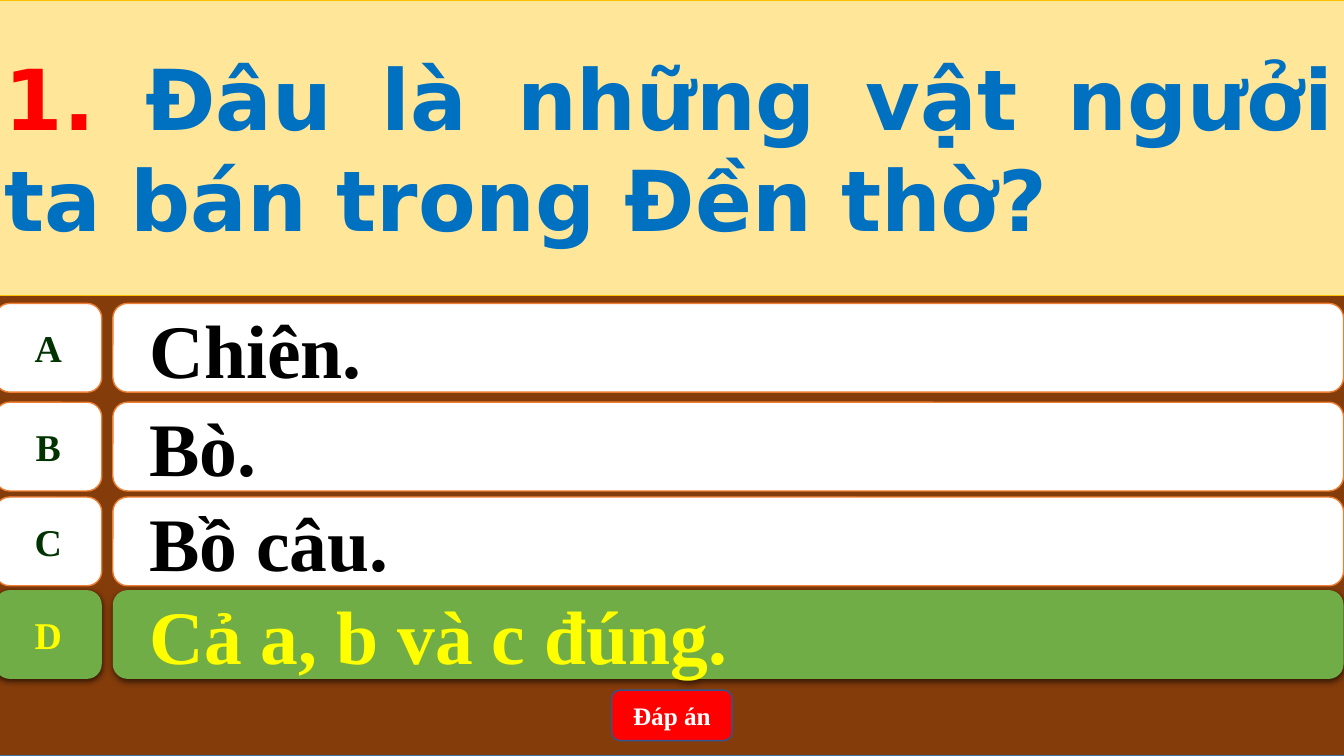
import pptx
import pptx.util
import pptx.dml.color
import pptx.enum.shapes
import pptx.enum.text
import pptx.oxml
import pptx.oxml.ns

Pt = pptx.util.Pt
RGBColor = pptx.dml.color.RGBColor
Shape = pptx.enum.shapes.MSO_SHAPE
Align = pptx.enum.text.PP_ALIGN
Anchor = pptx.enum.text.MSO_ANCHOR

WHITE = RGBColor(0xFF, 0xFF, 0xFF)
BLACK = RGBColor(0, 0, 0)
BROWN = RGBColor(0x84, 0x3C, 0x0B)
STEEL = RGBColor(0x43, 0x73, 0x9E)
NAVY = RGBColor(0x32, 0x54, 0x91)
ORANGE = RGBColor(0xED, 0x7D, 0x31)
CREAM = RGBColor(0xFF, 0xE6, 0x99)
GOLD = RGBColor(0xFF, 0xC0, 0)
RED = RGBColor(0xFF, 0, 0)
BLUE = RGBColor(0, 0x70, 0xC0)
PINE = RGBColor(0, 0x33, 0)
GREEN = RGBColor(0x70, 0xAD, 0x47)
YELLOW = RGBColor(0xFF, 0xFF, 0)

SHADOW = (
    '<a:outerShdw %s blurRad="57150" dist="19050" dir="5400000" algn="ctr" '
    'rotWithShape="0"><a:srgbClr val="000000"><a:alpha val="63000"/>'
    "</a:srgbClr></a:outerShdw>" % pptx.oxml.ns.nsdecls("a")
)


class Quiz:
    serif = "Times New Roman"
    sans = "DejaVu Sans"
    left = -3.6
    width = 964

    def __init__(self, slide):
        self.slide = slide

    def box(self, home, kind, area, fill, line=None, weight=1):
        shape = home.add_shape(kind, *[Pt(n) for n in area])
        shape.shadow.inherit = False
        shape.fill.solid()
        shape.fill.fore_color.rgb = fill
        if line is None:
            shape.line.fill.background()
        else:
            shape.line.color.rgb = line
            shape.line.width = Pt(weight)
        return shape

    def label(self, shape, runs, size, face, align=Align.CENTER, wrap=True):
        frame = shape.text_frame
        frame.word_wrap = wrap
        frame.vertical_anchor = Anchor.MIDDLE
        para = frame.paragraphs[0]
        para.alignment = align
        para.font.size = Pt(size)
        para.font.name = face
        para.font.bold = True
        for text, color in runs:
            run = para.add_run()
            run.text = text
            run.font.color.rgb = color
        return para

    def back(self):
        area = (self.left, 0, self.width, 540)
        self.box(self.slide.shapes, Shape.RECTANGLE, area, BROWN, STEEL)

    def ask(self, runs):
        area = (self.left, 0, self.width, 211)
        shape = self.box(self.slide.shapes, Shape.RECTANGLE, area, CREAM, GOLD, 0.5)
        self.label(shape, runs, 60, self.sans, Align.JUSTIFY)

    def choice(self, top, mark, text, right):
        fill, line = (GREEN, None) if right else (WHITE, ORANGE)
        home = self.slide.shapes.add_group_shape().shapes
        tag = self.box(home, Shape.FLOWCHART_ALTERNATE_PROCESS,
                       (self.left, top, 76.3, 63.4), fill, line)
        self.label(tag, [(mark, YELLOW if right else PINE)], 27, self.serif, wrap=False)
        bar = self.box(home, Shape.ROUNDED_RECTANGLE,
                       (80.6, top, 879.1, 63.4), fill, line)
        para = self.label(bar, [(text, YELLOW if right else BLACK)],
                          54, self.serif, Align.LEFT)
        para.level = 1
        props = para._p.get_or_add_pPr()
        props.set("marL", str(Pt(36)))
        props.set("indent", str(Pt(-20)))
        if right:
            for shape in (tag, bar):
                effects = shape._element.spPr.find(pptx.oxml.ns.qn("a:effectLst"))
                effects.append(pptx.oxml.parse_xml(SHADOW))

    def button(self, text):
        shape = self.box(self.slide.shapes, Shape.ROUNDED_RECTANGLE,
                         (437, 493, 86, 36), RED, NAVY)
        self.label(shape, [(text, WHITE)], 18, self.serif, wrap=False)


def main():
    deck = pptx.Presentation()
    deck.slide_width, deck.slide_height = Pt(960), Pt(540)
    quiz = Quiz(deck.slides.add_slide(deck.slide_layouts[6]))
    quiz.back()
    quiz.button("Đáp án")
    quiz.ask([("1. ", RED), ("Đâu là những vật ngưởi ta bán trong Đền thờ?", BLUE)])
    rows = [
        (216.7, "A", "Chiên."),
        (287.3, "B", "Bò."),
        (355, "C", "Bồ câu."),
        (421.5, "D", "Cả a, b và c đúng."),
    ]
    for top, mark, text in rows:
        quiz.choice(top, mark, text, mark == "D")
    deck.save("out.pptx")


if __name__ == "__main__":
    main()
